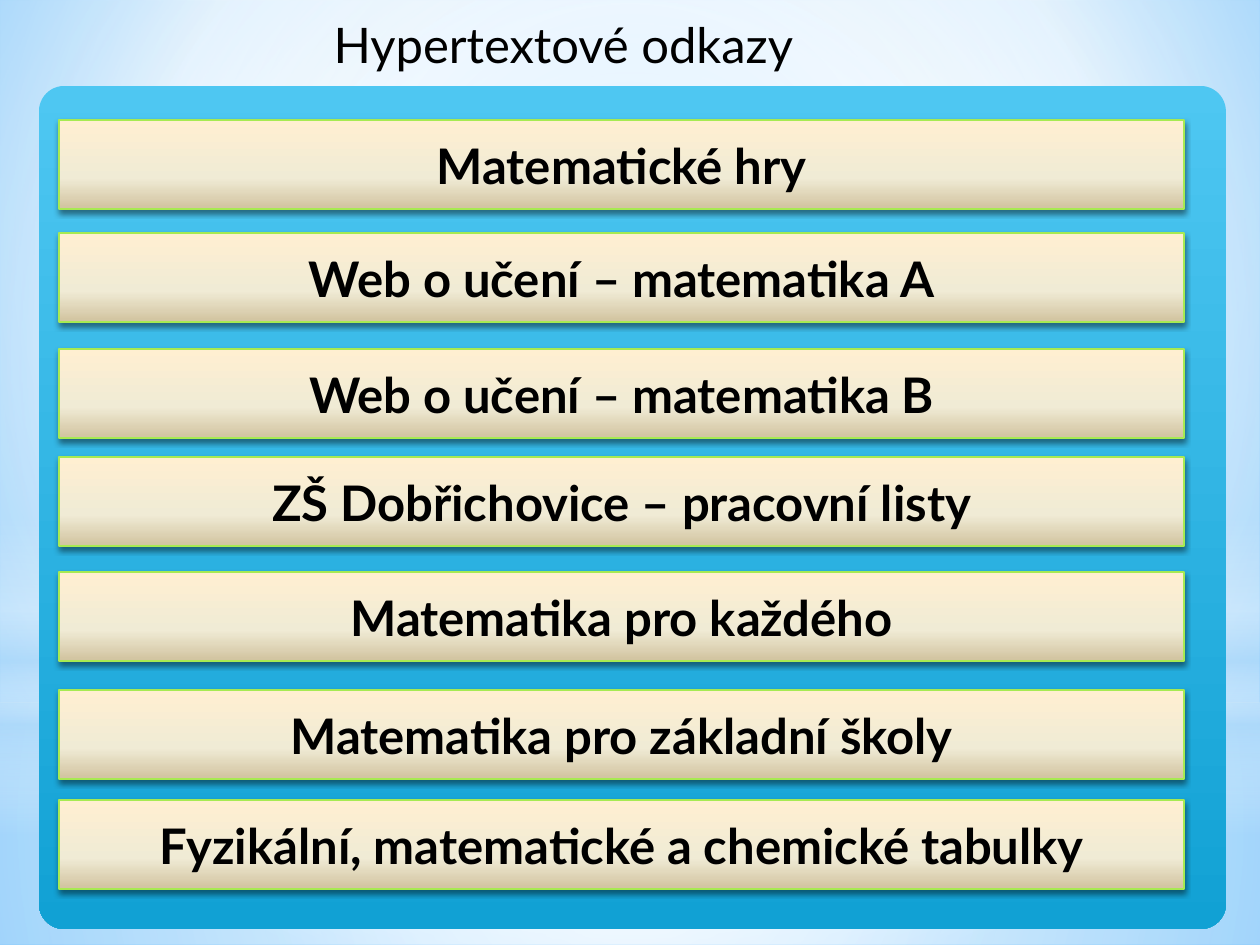
from pptx import Presentation, util as u
from pptx.dml.color import RGBColor
from pptx.enum import shapes, text
from pptx.oxml import parse_xml
from pptx.oxml.ns import nsdecls, qn

SCALE = 914400 / 126
WIDTH, HEIGHT = 1260, 945
WHITE, PALE_BLUE = "FFFFFF", "B4DCFA"
CENTRE = (50, 50, 50, 50)
BUTTON_STOPS = [(0, "FFEFD1"), (65, "F0EBD5"), (100, "D1C39F")]
BUTTONS = [
    (120, "Matematické hry"),
    (233, "Web o učení – matematika A"),
    (349, "Web o učení – matematika B"),
    (457, "ZŠ Dobřichovice – pracovní listy"),
    (572, "Matematika pro každého"),
    (690, "Matematika pro základní školy"),
    (800, "Fyzikální, matematické a chemické tabulky"),
]
GLOWS = [
    ("RECTANGLE", (0, 703, WIDTH, 242),
     [(0, WHITE, 91), (37, WHITE, 76), (100, PALE_BLUE, 79)], CENTRE),
    ("RECTANGLE", (0, 0, WIDTH, 703),
     [(0, WHITE, 89), (48, WHITE, 62), (100, PALE_BLUE, 79)], CENTRE),
    ("RECTANGLE", (0, 519, WIDTH, 315),
     [(0, WHITE, 0), (29, WHITE, 30), (45, PALE_BLUE, 40),
      (55, WHITE, 26), (65, PALE_BLUE, 60), (100, WHITE, 0)], None),
    ("OVAL", (0, 220, WIDTH, 703), [(0, WHITE, 100), (56, WHITE, 0)], CENTRE),
]


def px(value):
    """Turn pixels into EMU."""
    return u.Emu(round(value * SCALE))


def color(value):
    """Turn a hex string into a colour."""
    return RGBColor.from_string(value)


def set_gradient(fill, properties, stops, focus=None):
    """Fill with a circular gradient round a focus, or else a vertical one."""
    items = ""
    for position, value, *opacity in stops:
        alpha = "".join(f'<a:alpha val="{percent * 1000}"/>' for percent in opacity)
        items += (f'<a:gs pos="{position * 1000}"><a:srgbClr val="{value}">'
                  f'{alpha}</a:srgbClr></a:gs>')
    direction = '<a:lin ang="5400000" scaled="0"/>'
    if focus:
        sides = " ".join(f'{side}="{percent * 1000}"' for side, percent in zip("ltrb", focus))
        direction = f'<a:path path="circle"><a:fillToRect {sides}/></a:path>'
    fill.background()
    gradient = parse_xml(f'<a:gradFill {nsdecls("a")} rotWithShape="1">'
                         f'<a:gsLst>{items}</a:gsLst>{direction}</a:gradFill>')
    properties.replace(properties.find(qn("a:noFill")), gradient)


def add_gradient_shape(slide, kind, box, stops, focus=None):
    """Add a preset shape with a gradient and no outline or shadow."""
    preset = getattr(shapes.MSO_SHAPE, kind)
    shape = slide.shapes.add_shape(preset, *map(px, box))
    set_gradient(shape.fill, shape._element.spPr, stops, focus)
    shape.line.fill.background()
    shape.shadow.inherit = False
    return shape


def write_text(shape, content, frame_format, alignment, bold):
    """Write one formatted paragraph in a shape."""
    frame = shape.text_frame
    for name, value in frame_format.items():
        setattr(frame, name, value)
    paragraph = frame.paragraphs[0]
    paragraph.alignment = alignment
    run = paragraph.add_run()
    run.text = content
    for name, value in {"name": "Lato", "size": u.Pt(28), "bold": bold}.items():
        setattr(run.font, name, value)
    run.font.color.rgb = color("000000")


def add_button(slide, top, label):
    """Add a labelled bar with a green outline and a soft shadow."""
    shape = add_gradient_shape(slide, "RECTANGLE", (59, top, 1125, 89), BUTTON_STOPS)
    shape.line.color.rgb = color("A7EA52")
    shape.line.width = u.Pt(0.75)
    shape._element.spPr.find(qn("a:effectLst")).append(parse_xml(
        f'<a:outerShdw {nsdecls("a")} blurRad="40000" dist="23000" dir="5400000" '
        'rotWithShape="0"><a:srgbClr val="000000"><a:alpha val="45000"/>'
        '</a:srgbClr></a:outerShdw>'))
    write_text(shape, label, {"word_wrap": True, "vertical_anchor": text.MSO_ANCHOR.MIDDLE},
               text.PP_ALIGN.CENTER, True)


def set_title(slide, content, box):
    """Place the title in front of the background and format it."""
    title = slide.shapes.title
    for name, value in zip(("left", "top", "width", "height"), box):
        setattr(title, name, px(value))
    write_text(title, content, {
        "word_wrap": True,
        "vertical_anchor": text.MSO_ANCHOR.TOP,
        "auto_size": text.MSO_AUTO_SIZE.SHAPE_TO_FIT_TEXT,
    }, text.PP_ALIGN.LEFT, False)
    slide.shapes._spTree.append(title._element)


def main():
    """Build the slide of link buttons."""
    presentation = Presentation()
    presentation.slide_width, presentation.slide_height = px(WIDTH), px(HEIGHT)
    slide = presentation.slides.add_slide(presentation.slide_layouts[5])
    background = slide.background.fill
    set_gradient(background, slide._element.cSld.bg.bgPr,
                 [(0, "9ED5FF"), (60, WHITE), (100, "5BB9FF")], (20, 10, 20, 60))
    for glow in GLOWS:
        add_gradient_shape(slide, *glow)
    panel = add_gradient_shape(slide, "ROUNDED_RECTANGLE", (39, 86, 1187, 843),
                               [(0, "4EC7F2"), (100, "11A1D4")])
    panel.adjustments[0] = 0.03
    for top, label in BUTTONS:
        add_button(slide, top, label)
    set_title(slide, "Hypertextové odkazy", (321, 8, 863, 72))
    presentation.save("out.pptx")


if __name__ == "__main__":
    main()
